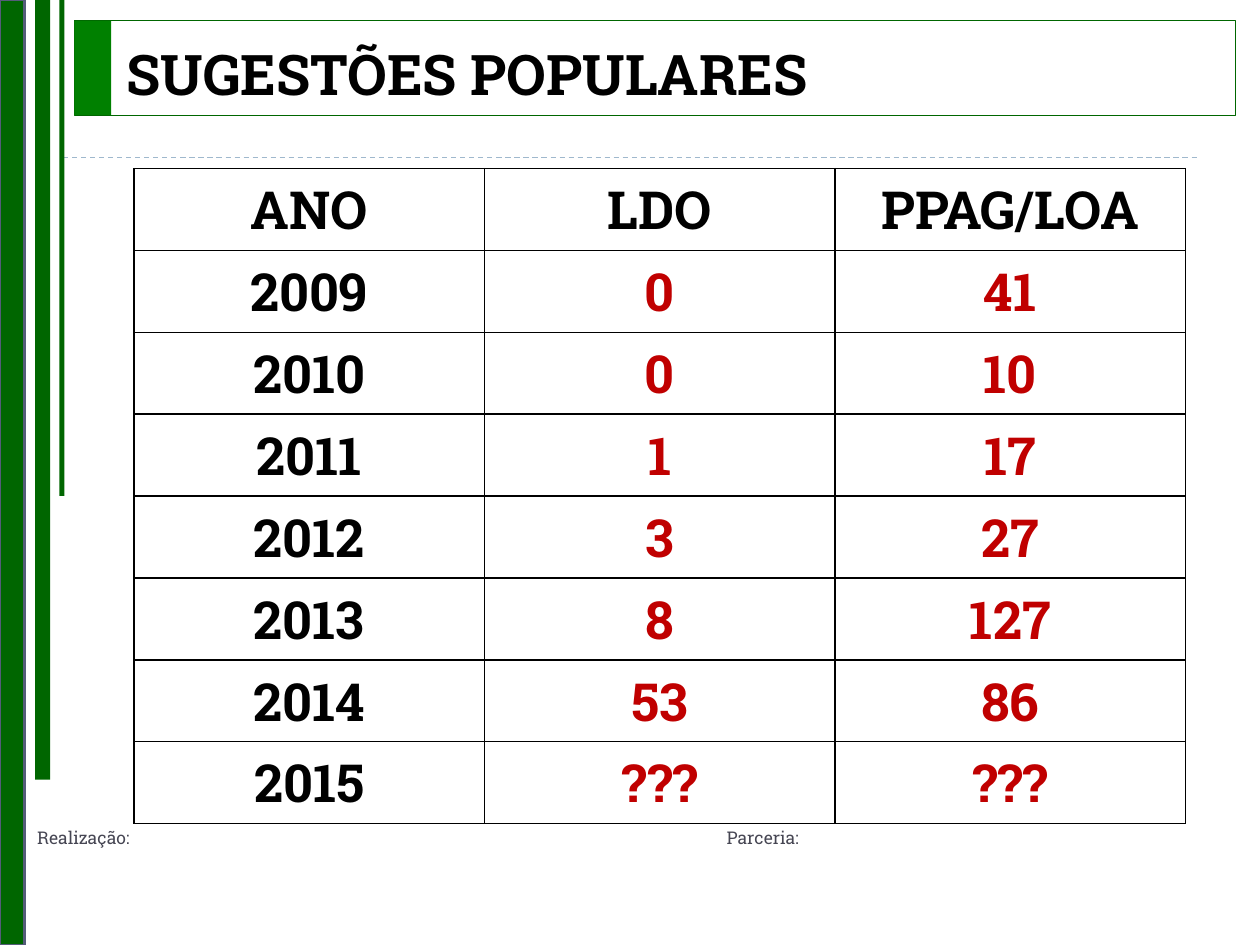
from dataclasses import dataclass

from lxml import etree
from pptx import Presentation
from pptx.dml.color import RGBColor
from pptx.enum.dml import MSO_LINE
from pptx.enum.shapes import MSO_CONNECTOR, MSO_SHAPE
from pptx.enum.text import MSO_ANCHOR, PP_ALIGN
from pptx.oxml.ns import qn
from pptx.util import Cm, Pt

RECT = MSO_SHAPE.RECTANGLE
LINE = MSO_CONNECTOR.STRAIGHT
DASH = MSO_LINE.DASH
CENTER = PP_ALIGN.CENTER
MIDDLE = MSO_ANCHOR.MIDDLE
TOP = MSO_ANCHOR.TOP


@dataclass(frozen=True)
class Theme:
    font: str = "Roboto Slab"
    dark: str = "006600"
    green: str = "008000"
    edge: str = "545C79"
    rule: str = "9FB8CD"
    black: str = "000000"
    white: str = "FFFFFF"
    red: str = "C00000"
    gray: str = "464653"
    title: int = 32
    cell: int = 30
    note: int = 10


def color(code):
    return RGBColor.from_string(code)


class Painter:
    def __init__(self, slide, theme):
        self.slide = slide
        self.theme = theme

    def style(self, par, size, tone, bold=False):
        for run in par.runs:
            font = run.font
            font.name = self.theme.font
            font.size = Pt(size)
            font.bold = bold
            font.color.rgb = color(tone)

    def rect(self, x, y, w, h, fill=None, line=None, width=0.5):
        box = self.slide.shapes.add_shape(RECT, Cm(x), Cm(y), Cm(w), Cm(h))
        box.shadow.inherit = False
        if fill:
            box.fill.solid()
            box.fill.fore_color.rgb = color(fill)
        else:
            box.fill.background()
        if line:
            box.line.color.rgb = color(line)
            box.line.width = Pt(width)
        else:
            box.line.fill.background()

    def rule(self, x, y, w, tone):
        line = self.slide.shapes.add_connector(
            LINE, Cm(x), Cm(y), Cm(x + w), Cm(y))
        line.line.color.rgb = color(tone)
        line.line.width = Pt(0.75)
        line.line.dash_style = DASH
        etree.SubElement(line._element.spPr, qn("a:effectLst"))

    def text(self, x, y, w, h, words, size, tone, bold=False, inset=0.13, tab=None):
        box = self.slide.shapes.add_textbox(Cm(x), Cm(y), Cm(w), Cm(h))
        frame = box.text_frame
        frame.word_wrap = True
        frame.vertical_anchor = TOP
        frame.margin_top = Cm(inset)
        par = frame.paragraphs[0]
        par.text = words
        self.style(par, size, tone, bold)
        if tab:
            stops = etree.SubElement(par._p.get_or_add_pPr(), qn("a:tabLst"))
            etree.SubElement(stops, qn("a:tab"), pos=str(Cm(tab)), algn="l")

    def border(self, cell):
        props = cell._tc.get_or_add_tcPr()
        for spot, side in enumerate(("a:lnL", "a:lnR", "a:lnT", "a:lnB")):
            line = etree.Element(qn(side), w=str(Pt(1)))
            fill = etree.SubElement(line, qn("a:solidFill"))
            etree.SubElement(fill, qn("a:srgbClr"), val=self.theme.black)
            props.insert(spot, line)

    def table(self, x, y, w, high, data):
        theme = self.theme
        rows, cols = len(data), len(data[0])
        grid = self.slide.shapes.add_table(
            rows, cols, Cm(x), Cm(y), Cm(w), Cm(high * rows)).table
        for r, row in enumerate(data):
            for c, word in enumerate(row):
                cell = grid.cell(r, c)
                cell.fill.solid()
                cell.fill.fore_color.rgb = color(theme.white)
                cell.vertical_anchor = MIDDLE
                par = cell.text_frame.paragraphs[0]
                par.text = word
                par.alignment = CENTER
                tone = theme.red if r and c else theme.black
                self.style(par, theme.cell, tone, True)
                self.border(cell)


def main():
    deck = Presentation()
    deck.slide_width, deck.slide_height = Cm(25.4), Cm(19.05)
    theme = Theme()
    page = Painter(deck.slides.add_slide(deck.slide_layouts[6]), theme)

    page.rect(0.71, 0, 0.3, 15.72, theme.dark)
    page.rule(1.27, 3.18, 22.86, theme.rule)
    page.rect(1.5, 0.42, 23.4, 1.9, line=theme.dark)
    page.rect(1.5, 0.42, 0.74, 1.9, theme.green)
    page.rect(0, 0, 0.5, 19.05, theme.dark, theme.edge, 1.5)
    page.rect(1.2, 0, 0.1, 10, theme.dark)

    page.text(0.5, 16.54, 24.26, 0.79, "Realização:\tParceria:",
              theme.note, theme.gray, tab=13.9)
    page.text(2.31, 0.74, 21.64, 1.4, "SUGESTÕES POPULARES",
              theme.title, theme.black, True, inset=0.06)
    page.table(2.7, 3.4, 21.2, 1.65, [
        ("ANO", "LDO", "PPAG/LOA"),
        ("2009", "0", "41"),
        ("2010", "0", "10"),
        ("2011", "1", "17"),
        ("2012", "3", "27"),
        ("2013", "8", "127"),
        ("2014", "53", "86"),
        ("2015", "???", "???"),
    ])
    deck.save("out.pptx")


if __name__ == "__main__":
    main()
